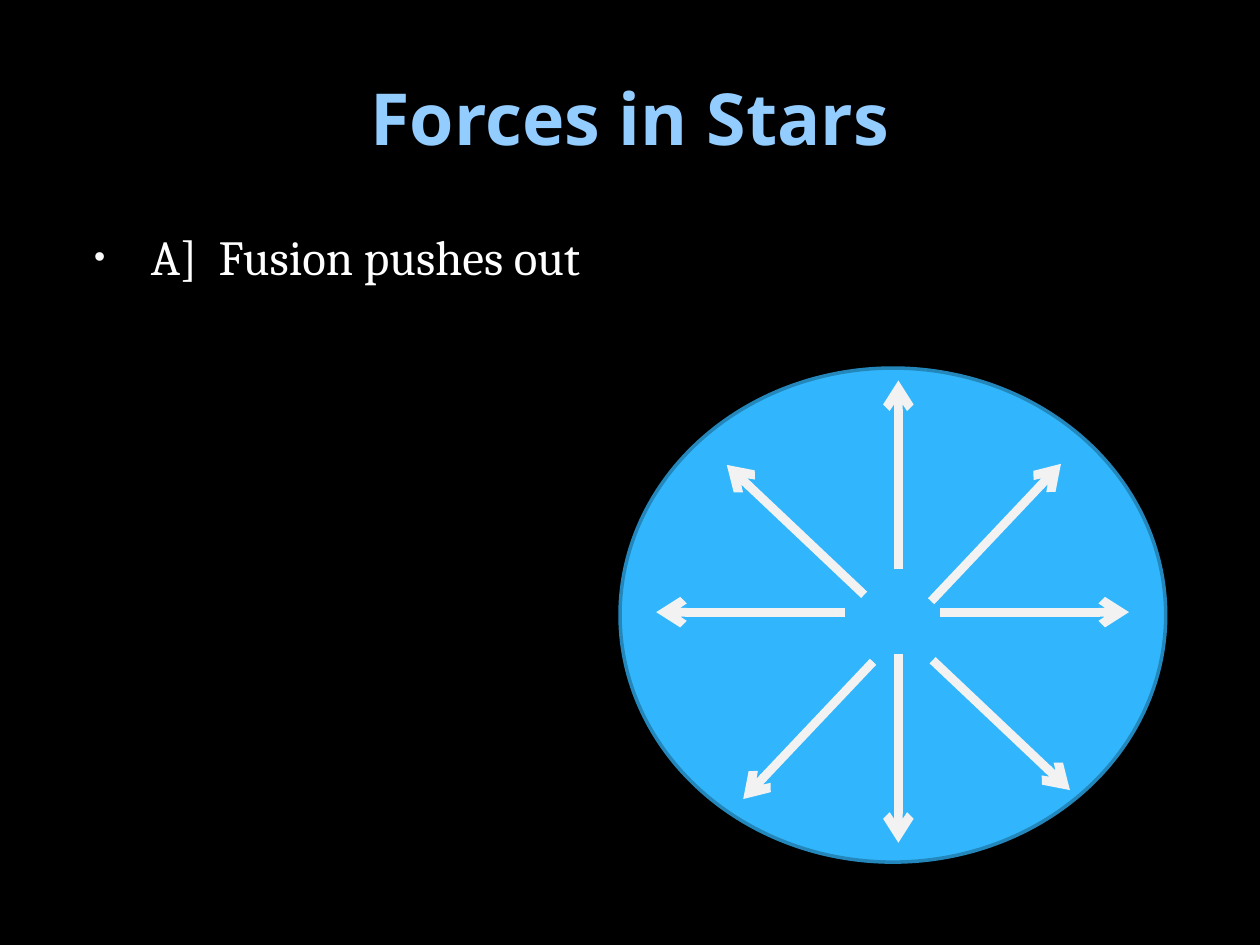
from math import cos, radians, sin

from lxml.etree import SubElement
from pptx import Presentation
from pptx.dml.color import RGBColor
from pptx.enum.shapes import MSO_CONNECTOR, MSO_SHAPE
from pptx.enum.text import MSO_ANCHOR, PP_ALIGN
from pptx.oxml.ns import qn
from pptx.util import Cm, Pt

COLORS = {
    "background": "000000",
    "title": "93CDFF",
    "text": "FFFFFF",
    "bullet": "F9F9F9",
    "star": "31B6FD",
    "star_edge": "2487BB",
    "arrow": "F2F2F2",
}

ARROW_LENGTH = 3.81
# Start of each arrow inside the star's box (cm) and its direction,
# in degrees counter-clockwise from the right.
ARROWS = [
    (5.61, 4.06, 90),
    (4.54, 4.92, 180),
    (6.45, 4.92, 0),
    (5.61, 5.76, 270),
    (6.27, 4.70, 46.6),
    (4.92, 4.57, 136.6),
    (6.30, 5.89, 316.6),
    (5.10, 5.92, 226.6),
]


def color(name):
    return RGBColor.from_string(COLORS[name])


def add_text(slide, box, text, font_name, size, color_name):
    """Add a one-paragraph text box and return its frame and paragraph."""
    frame = slide.shapes.add_textbox(*map(Cm, box)).text_frame
    frame.word_wrap = True
    paragraph = frame.paragraphs[0]
    paragraph.text = text
    paragraph.font.name = font_name
    paragraph.font.size = Pt(size)
    paragraph.font.color.rgb = color(color_name)
    return frame, paragraph


def add_title(slide, box):
    frame, paragraph = add_text(
        slide, box, "Forces in Stars", "Noto Sans", 41, "title")
    frame.vertical_anchor = MSO_ANCHOR.MIDDLE
    paragraph.alignment = PP_ALIGN.CENTER
    paragraph.font.bold = True


def add_body(slide, box):
    _, paragraph = add_text(
        slide, box, "A]  Fusion pushes out", "Cambria", 28, "text")
    paragraph.space_before = Pt(5.6)
    add_bullet(paragraph)


def add_bullet(paragraph):
    properties = paragraph._p.get_or_add_pPr()
    properties.set("marL", str(Cm(1.52)))
    properties.set("indent", str(Cm(-1.14)))
    bullet_color = properties.makeelement(qn("a:buClr"), {})
    SubElement(bullet_color, qn("a:srgbClr"), val=COLORS["bullet"])
    bullet_parts = [
        bullet_color,
        properties.makeelement(qn("a:buSzPct"), {"val": "65000"}),
        properties.makeelement(qn("a:buFont"), {"typeface": "Arial"}),
        properties.makeelement(qn("a:buChar"), {"char": "•"}),
    ]
    position = properties.index(properties.find(qn("a:defRPr")))
    properties[position:position] = bullet_parts


def add_arrow(shapes, start_x, start_y, angle):
    end_x = start_x + ARROW_LENGTH * cos(radians(angle))
    end_y = start_y - ARROW_LENGTH * sin(radians(angle))
    arrow = shapes.add_connector(
        MSO_CONNECTOR.STRAIGHT, Cm(start_x), Cm(start_y), Cm(end_x), Cm(end_y))
    arrow.line.color.rgb = color("arrow")
    arrow.line.width = Pt(5)
    SubElement(arrow.line._get_or_add_ln(), qn("a:tailEnd"), type="arrow")
    SubElement(arrow._element.spPr, qn("a:effectLst"))


def add_star(slide, box):
    """Add the star with its outward arrows."""
    left, top, _, _ = box
    star = slide.shapes.add_shape(MSO_SHAPE.OVAL, *map(Cm, box))
    star.shadow.inherit = False
    star.fill.solid()
    star.fill.fore_color.rgb = color("star")
    star.line.color.rgb = color("star_edge")
    star.line.width = Pt(2)

    arrows = slide.shapes.add_group_shape()
    for x, y, angle in ARROWS:
        add_arrow(arrows.shapes, left + x, top + y, angle)


def main():
    presentation = Presentation()
    presentation.slide_width = Cm(25.4)
    presentation.slide_height = Cm(19.05)
    slide = presentation.slides.add_slide(presentation.slide_layouts[6])
    slide.background.fill.solid()
    slide.background.fill.fore_color.rgb = color("background")

    add_title(slide, (1.27, 0.76, 22.86, 3.18))
    add_body(slide, (1.27, 4.45, 22.86, 13.08))
    add_star(slide, (12.5, 7.42, 11, 9.96))
    presentation.save("out.pptx")


if __name__ == "__main__":
    main()
